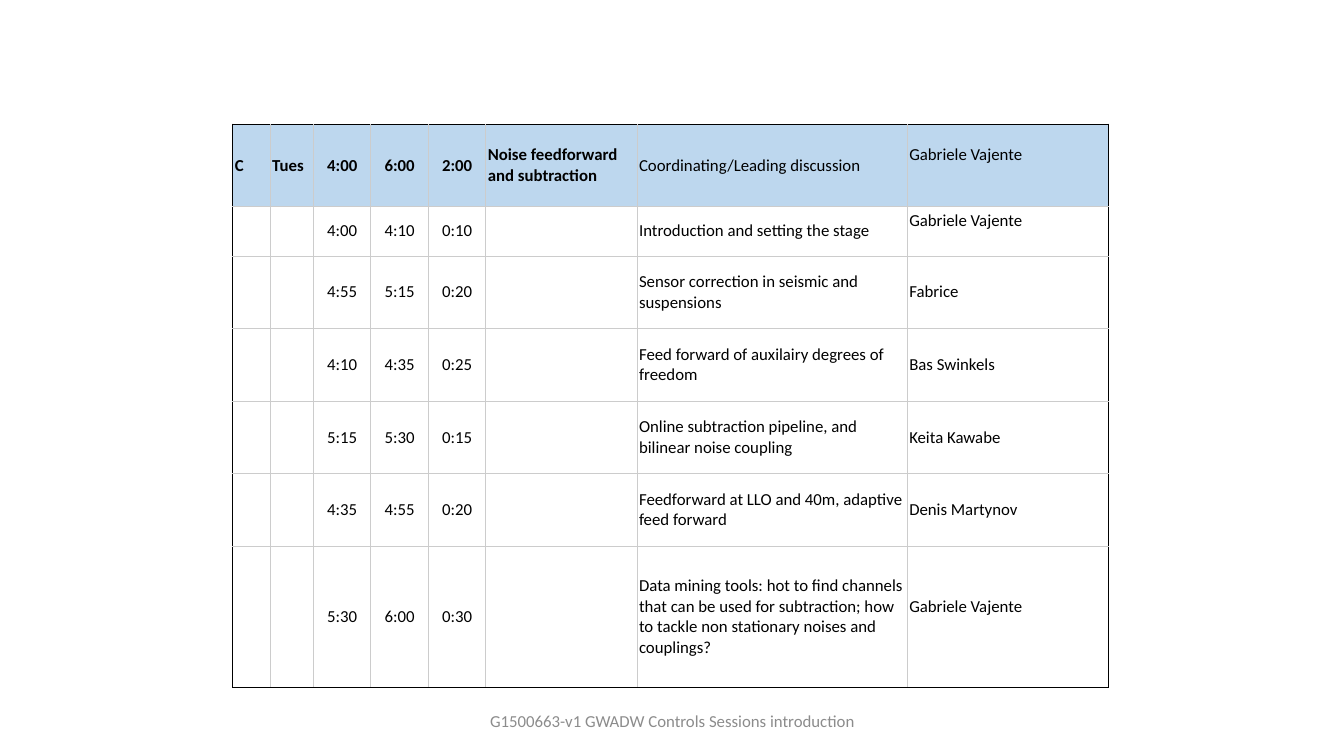
from dataclasses import dataclass

from lxml.etree import SubElement
from pptx import Presentation
from pptx.dml.color import RGBColor
from pptx.enum.text import MSO_ANCHOR, PP_ALIGN
from pptx.oxml.ns import qn
from pptx.util import Inches, Pt


@dataclass(frozen=True)
class Theme:
    font: str = "Calibri"
    size: int = 12
    text: str = "000000"
    muted: str = "8C8C8C"
    session_fill: str = "BDD7EE"
    frame: str = "000000"
    rule: str = "CCCCCC"
    rule_width: float = 0.75


# One grid column or row is a tenth of an inch.
GRID_COLUMNS, GRID_ROWS = 133.3, 75
COLUMN_WIDTHS = [3.7, 4.3, 5.7, 5.7, 5.7, 15, 26.8, 20]
ROW_HEIGHTS = [8.2, 4.9, 7.2, 7.2, 7.2, 7.2, 14]
TIME_COLUMNS = range(2, 5)
BOLD_COLUMNS = range(6)
SPEAKER_COLUMN = 7
LEADER = "Gabriele Vajente"

SESSION = ["C", "Tues", "4:00", "6:00", "2:00", "Noise feedforward and subtraction",
           "Coordinating/Leading discussion", LEADER]
TALKS = [
    ("4:00", "4:10", "0:10", "Introduction and setting the stage", LEADER),
    ("4:55", "5:15", "0:20", "Sensor correction in seismic and suspensions", "Fabrice"),
    ("4:10", "4:35", "0:25", "Feed forward of auxilairy degrees of freedom", "Bas Swinkels"),
    ("5:15", "5:30", "0:15", "Online subtraction pipeline, and bilinear noise coupling",
     "Keita Kawabe"),
    ("4:35", "4:55", "0:20", "Feedforward at LLO and 40m, adaptive feed forward",
     "Denis Martynov"),
    ("5:30", "6:00", "0:30", "Data mining tools: hot to find channels that can be used for "
     "subtraction; how to tackle non stationary noises and couplings?", LEADER),
]


def grid(units):
    return Inches(units / 10)


class AgendaSlide:
    def __init__(self, presentation, theme):
        self.theme = theme
        self.slide = presentation.slides.add_slide(presentation.slide_layouts[6])

    def set_wording(self, frame, wording, color, bold=False, align=PP_ALIGN.LEFT):
        frame.word_wrap = True
        frame.text = wording
        paragraph = frame.paragraphs[0]
        paragraph.alignment = align
        for font in [paragraph.font] + [run.font for run in paragraph.runs]:
            font.name = self.theme.font
            font.size = Pt(self.theme.size)
            font.bold = bold
            font.color.rgb = RGBColor.from_string(color)

    def borders(self, cell, on_frame):
        """Rule all four sides; on_frame maps each side to whether it lies on the outer frame."""
        properties = cell._tc.get_or_add_tcPr()
        for position, (side, outer) in enumerate(on_frame.items()):
            line = SubElement(properties, qn(f"a:ln{side}"), w=str(Pt(self.theme.rule_width)))
            properties.insert(position, line)
            fill = SubElement(line, qn("a:solidFill"))
            SubElement(fill, qn("a:srgbClr"), val=self.theme.frame if outer else self.theme.rule)

    def agenda(self, left, top, rows):
        last_row, last_column = len(ROW_HEIGHTS) - 1, len(COLUMN_WIDTHS) - 1
        table = self.slide.shapes.add_table(
            len(ROW_HEIGHTS), len(COLUMN_WIDTHS), grid(left), grid(top),
            grid(sum(COLUMN_WIDTHS)), grid(sum(ROW_HEIGHTS))).table
        table.first_row = table.horz_banding = False
        for column, width in zip(table.columns, COLUMN_WIDTHS):
            column.width = grid(width)
        for r, (row, height, entries) in enumerate(zip(table.rows, ROW_HEIGHTS, rows)):
            row.height = grid(height)
            for c, (cell, wording) in enumerate(zip(row.cells, entries)):
                self.set_wording(cell.text_frame, wording, self.theme.text,
                                 bold=r == 0 and c in BOLD_COLUMNS,
                                 align=PP_ALIGN.CENTER if c in TIME_COLUMNS else PP_ALIGN.LEFT)
                cell.vertical_anchor = MSO_ANCHOR.MIDDLE
                cell.margin_left = cell.margin_right = grid(0.2)
                cell.margin_top = grid(0.1)
                raised = c == SPEAKER_COLUMN and wording == LEADER
                cell.margin_bottom = grid(2.1 if raised else 0.1)
                if r == 0:
                    cell.fill.solid()
                    cell.fill.fore_color.rgb = RGBColor.from_string(self.theme.session_fill)
                else:
                    cell.fill.background()
                self.borders(cell, {"L": c == 0, "R": c == last_column,
                                    "T": r == 0, "B": r == last_row})

    def footer(self, left, top, width, height, wording):
        frame = self.slide.shapes.add_textbox(
            grid(left), grid(top), grid(width), grid(height)).text_frame
        frame.vertical_anchor = MSO_ANCHOR.MIDDLE
        self.set_wording(frame, wording, self.theme.muted, align=PP_ALIGN.CENTER)


def main():
    presentation = Presentation()
    presentation.slide_width = grid(GRID_COLUMNS)
    presentation.slide_height = grid(GRID_ROWS)
    slide = AgendaSlide(presentation, Theme())
    talk_rows = [["", "", start, end, length, "", topic, speaker]
                 for start, end, length, topic, speaker in TALKS]
    slide.agenda(23.1, 12.3, [SESSION] + talk_rows)
    slide.footer(44.2, 69.5, 45, 4, "G1500663-v1 GWADW Controls Sessions introduction")
    presentation.save("out.pptx")


if __name__ == "__main__":
    main()
